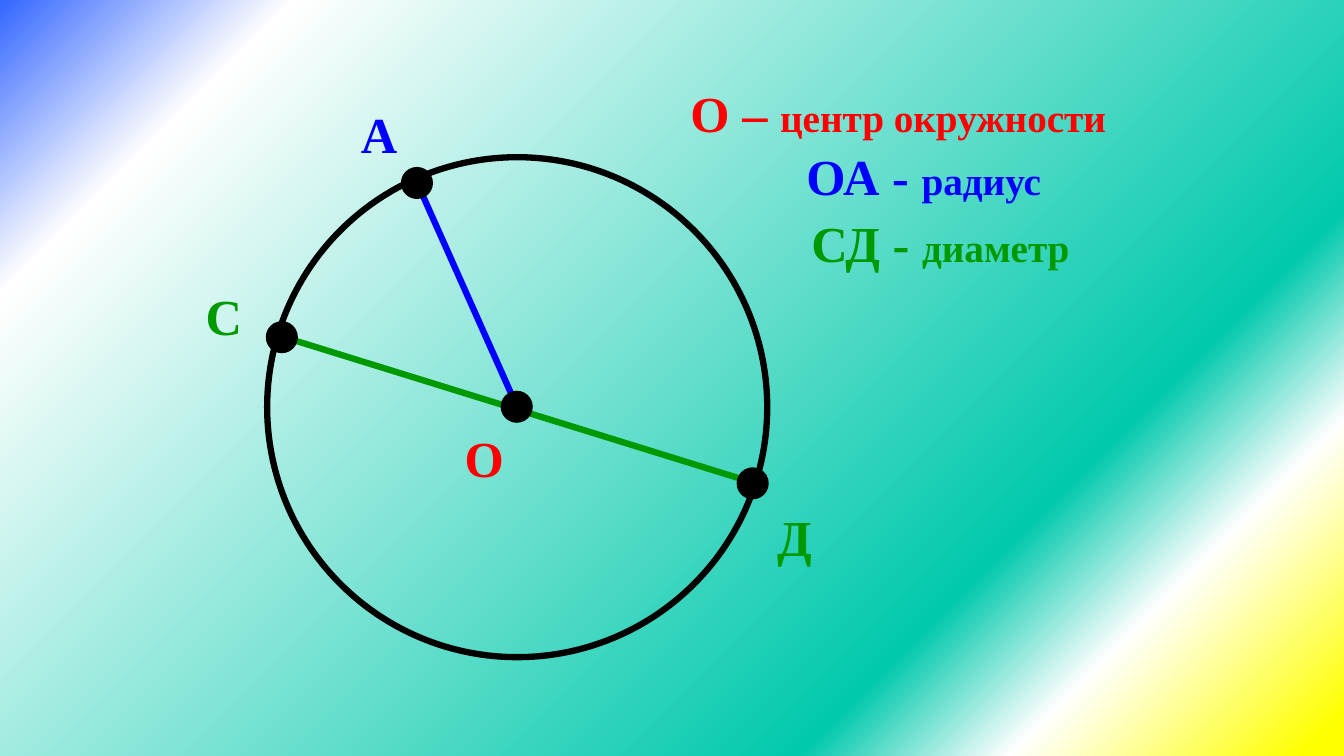
from pptx import Presentation
from pptx.dml.color import RGBColor
from pptx.enum.shapes import MSO_CONNECTOR, MSO_SHAPE
from pptx.enum.text import MSO_AUTO_SIZE
from pptx.oxml import parse_xml
from pptx.oxml.ns import nsdecls
from pptx.oxml.xmlchemy import OxmlElement
from pptx.util import Inches, Pt

LINE = MSO_CONNECTOR.STRAIGHT
OVAL = MSO_SHAPE.OVAL
FIT = MSO_AUTO_SIZE.SHAPE_TO_FIT_TEXT
FONT = "Times New Roman"
COLORS = {
    "red": "FF0000", "blue": "0000FF", "green": "009900", "black": "000000",
    "yellow": "FFFF00", "white": "FFFFFF", "teal": "01C9AC", "sky": "3366FF",
}


def color(name):
    return RGBColor.from_string(COLORS[name])


def oval(left, top, size, width):
    shape = slide.shapes.add_shape(
        OVAL, Inches(left), Inches(top), Inches(size), Inches(size))
    shape.shadow.inherit = False
    shape.fill.background()
    shape.line.color.rgb = color("black")
    shape.line.width = Pt(width)
    return shape


prs = Presentation()
prs.slide_width, prs.slide_height = Inches(13.33), Inches(7.5)
slide = prs.slides.add_slide(prs.slide_layouts[6])

# Gradient background, spreading from the bottom right corner
stops = ""
for pos, name, alpha in [(2, "yellow", 100), (16, "white", 100), (26, "teal", 45),
                         (86, "white", 100), (100, "sky", 100)]:
    stops += (f'<a:gs pos="{pos * 1000}"><a:srgbClr val="{COLORS[name]}">'
              f'<a:alpha val="{alpha * 1000}"/></a:srgbClr></a:gs>')
slide.element.cSld.insert(0, parse_xml(
    f'<p:bg {nsdecls("p", "a")}><p:bgPr><a:gradFill><a:gsLst>{stops}</a:gsLst>'
    '<a:path path="circle"><a:fillToRect l="100000" t="100000"/></a:path>'
    '</a:gradFill><a:effectLst/></p:bgPr></p:bg>'))

# Diameter and radius
for x1, y1, x2, y2, name in [(2.8, 3.34, 7.51, 4.8, "green"),
                             (4.14, 1.82, 5.13, 4.04, "blue")]:
    line = slide.shapes.add_connector(
        LINE, Inches(x1), Inches(y1), Inches(x2), Inches(y2))
    line.line.color.rgb = color(name)
    line.line.width = Pt(4.5)
    line.element.spPr.append(OxmlElement("a:effectLst"))

# Circle and its points
oval(2.65, 1.56, 4.96, 4.5)
for left, top in [(4.98, 3.89), (7.32, 4.65), (2.65, 3.2), (3.99, 1.67)]:
    dot = oval(left, top, 0.29, 2)
    dot.fill.solid()
    dot.fill.fore_color.rgb = color("black")

# Point letters and legend: letters large, meaning smaller
labels = [
    (4.51, 4.19, 0.71, True, "red", "О", ""),
    (3.48, 0.97, 0.47, True, "blue", "А", ""),
    (1.94, 2.78, 0.57, False, "green", "С", ""),
    (7.61, 4.97, 0.55, False, "green", "Д", ""),
    (6.75, 0.77, 4.72, True, "red", "О – ", "центр окружности"),
    (7.9, 1.39, 2.55, False, "blue", "ОА - ", "радиус"),
    (7.95, 2.06, 2.79, False, "green", "СД - ", "диаметр"),
]
for left, top, width, wrap, name, sign, sense in labels:
    box = slide.shapes.add_textbox(
        Inches(left), Inches(top), Inches(width), Inches(0.71))
    frame = box.text_frame
    frame.word_wrap = wrap
    frame.auto_size = FIT
    para = frame.paragraphs[0]
    para.font.name = FONT
    para.font.bold = True
    para.font.color.rgb = color(name)
    for text, size in [(sign, 36), (sense, 28)]:
        if text:
            run = para.add_run()
            run.text = text
            run.font.size = Pt(size)

prs.save("out.pptx")
